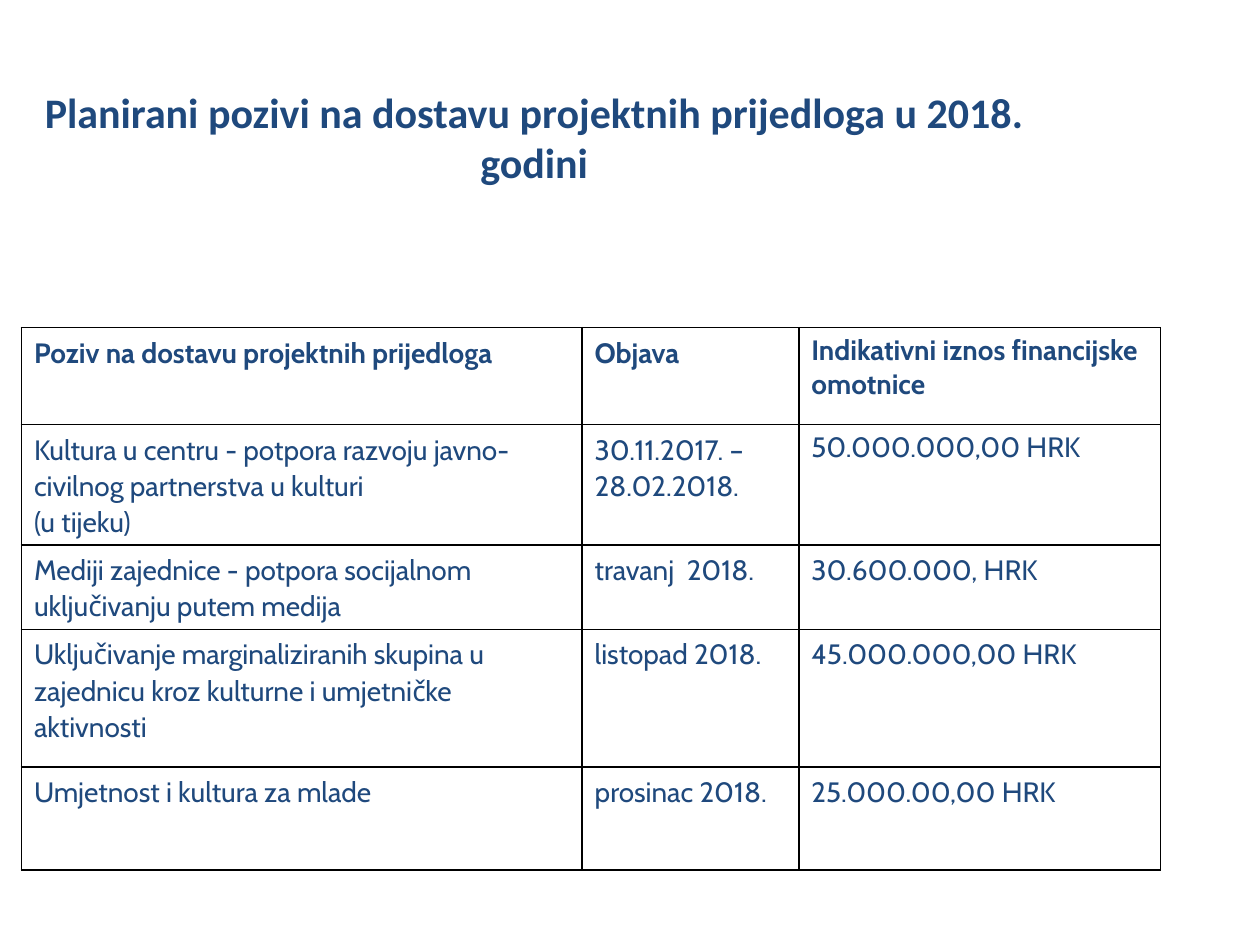
"""Build a slide with a table of calls for project proposals planned for 2018."""
from lxml import etree
from pptx import Presentation
from pptx.dml.color import RGBColor
from pptx.enum.text import MSO_ANCHOR, PP_ALIGN
from pptx.oxml.ns import qn
from pptx.util import Inches, Pt

CENTER, LEFT = PP_ALIGN.CENTER, PP_ALIGN.LEFT
MIDDLE = MSO_ANCHOR.MIDDLE
NAVY = RGBColor(0x1F, 0x49, 0x7D)
BLACK = RGBColor(0x00, 0x00, 0x00)

TITLE = "Planirani pozivi na dostavu projektnih prijedloga u 2018. godini"
CALLS = [
    ("Poziv na dostavu projektnih prijedloga", "Objava",
     "Indikativni iznos financijske omotnice"),
    ("Kultura u centru - potpora razvoju javno-civilnog partnerstva u kulturi\n(u tijeku)",
     "30.11.2017. – 28.02.2018.", "50.000.000,00 HRK"),
    ("Mediji zajednice - potpora socijalnom uključivanju putem medija",
     "travanj  2018.", "30.600.000, HRK"),
    ("Uključivanje marginaliziranih skupina u zajednicu kroz kulturne i umjetničke aktivnosti",
     "listopad 2018.", "45.000.000,00 HRK"),
    ("Umjetnost i kultura za mlade", "prosinac 2018.", "25.000.00,00 HRK"),
]
COLUMN_WIDTHS = [4.45, 1.72, 2.87]
ROW_HEIGHTS = [0.77, 0.77, 0.48, 1.09, 0.82]
SINGLE_SPACED = {(0, 2), (1, 2)}


def write_text(frame, text, font="Cabin", size=16, bold=False, align=LEFT, spacing=None):
    frame.word_wrap = True
    frame.text = text
    for paragraph in frame.paragraphs:
        paragraph.alignment = align
        paragraph.line_spacing = spacing
        for run in paragraph.runs:
            run.font.name = font
            run.font.size = Pt(size)
            run.font.bold = bold
            run.font.color.rgb = NAVY


def add_borders(cell, width=1):
    properties = cell._tc.get_or_add_tcPr()
    for index, side in enumerate(("a:lnL", "a:lnR", "a:lnT", "a:lnB")):
        line = etree.Element(qn(side), w=str(Pt(width)))
        fill = etree.SubElement(line, qn("a:solidFill"))
        etree.SubElement(fill, qn("a:srgbClr"), val=str(BLACK))
        properties.insert(index, line)


def add_title(slide):
    box = slide.shapes.add_textbox(Inches(0.08), Inches(0.46), Inches(8.32), Inches(1.25))
    box.text_frame.vertical_anchor = MIDDLE
    write_text(box.text_frame, TITLE, font="Calibri", size=24, bold=True, align=CENTER)


def add_calls_table(slide):
    table = slide.shapes.add_table(
        len(CALLS), len(COLUMN_WIDTHS), Inches(0.17), Inches(2.6),
        Inches(sum(COLUMN_WIDTHS)), Inches(sum(ROW_HEIGHTS))).table
    table.first_row = table.horz_banding = False
    for column, width in zip(table.columns, COLUMN_WIDTHS):
        column.width = Inches(width)
    for row_index, (row, height) in enumerate(zip(table.rows, ROW_HEIGHTS)):
        row.height = Inches(height)
        for column_index, cell in enumerate(row.cells):
            single = (row_index, column_index) in SINGLE_SPACED
            write_text(cell.text_frame, CALLS[row_index][column_index],
                       bold=row_index == 0, spacing=None if single else 1.07)
            cell.fill.background()
            add_borders(cell)


def main():
    presentation = Presentation()
    presentation.slide_width, presentation.slide_height = Inches(10), Inches(7.5)
    slide = presentation.slides.add_slide(presentation.slide_layouts[6])
    add_title(slide)
    add_calls_table(slide)
    presentation.save("out.pptx")


if __name__ == "__main__":
    main()
